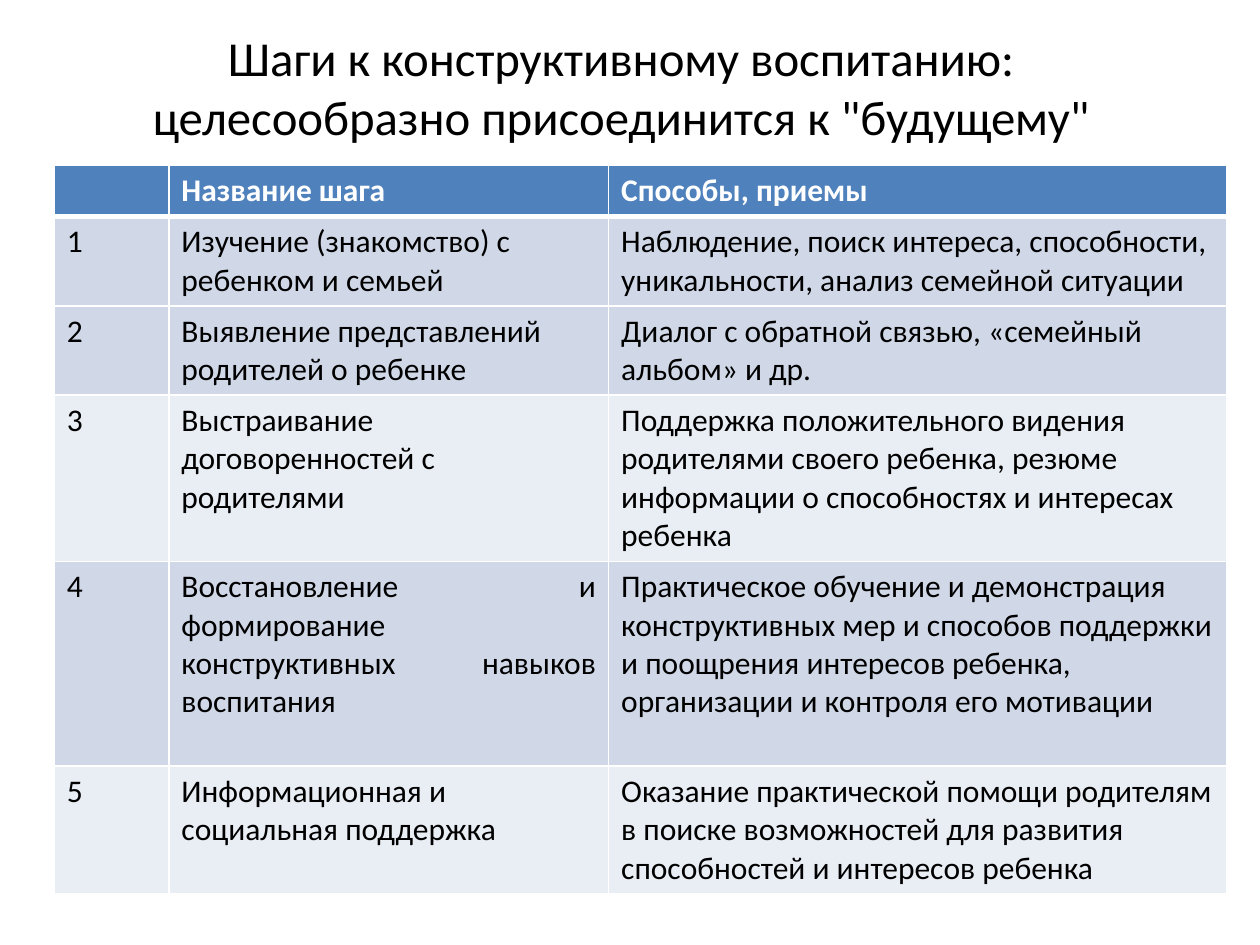
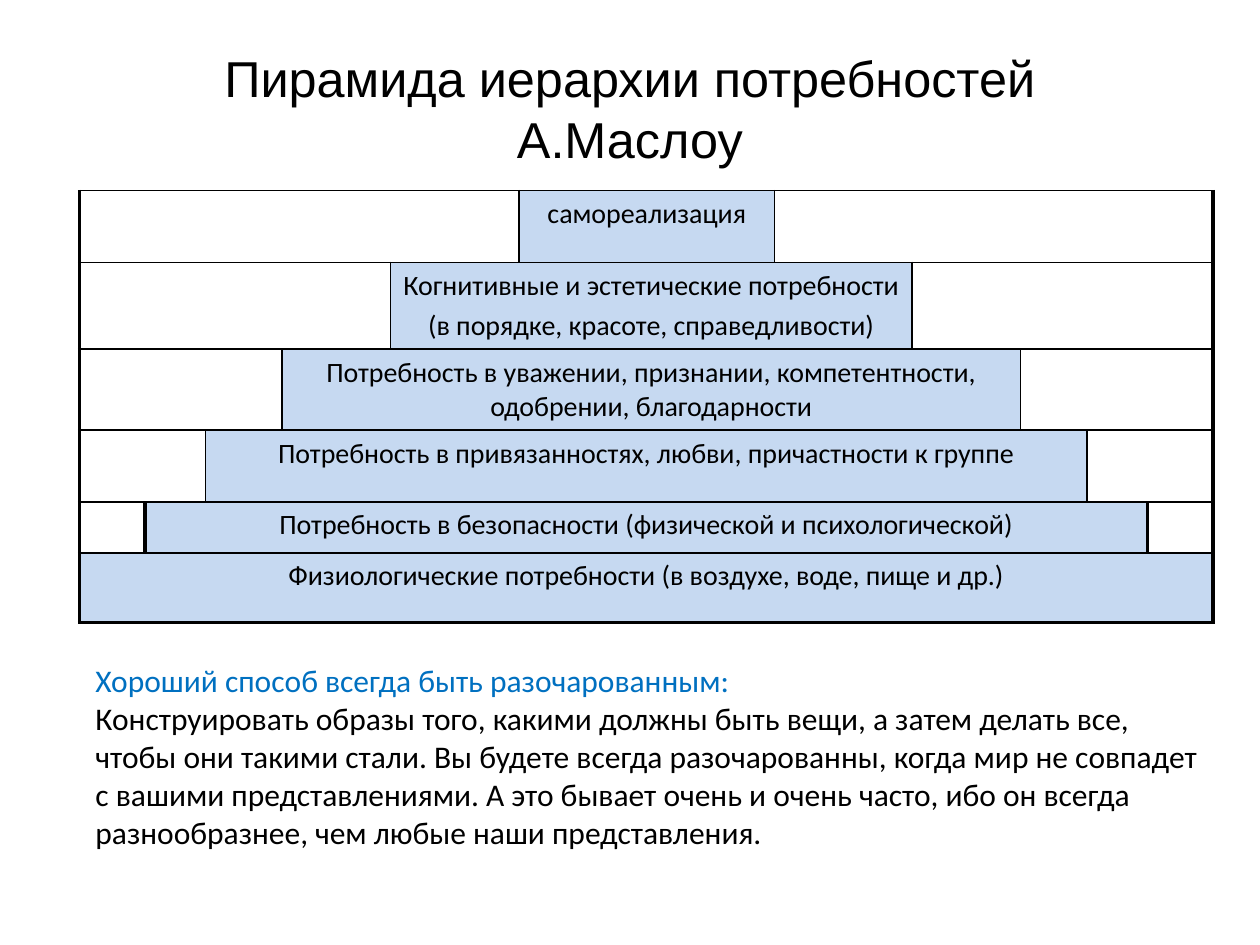
from lxml import etree
from pptx import Presentation
from pptx.dml.color import RGBColor
from pptx.enum.text import MSO_ANCHOR, PP_ALIGN
from pptx.oxml.ns import qn
from pptx.util import Pt

LEFT, CENTER, JUSTIFY = PP_ALIGN.LEFT, PP_ALIGN.CENTER, PP_ALIGN.JUSTIFY
MIDDLE = MSO_ANCHOR.MIDDLE
BLANK_LAYOUT = 6

BLACK, WHITE = "000000", "FFFFFF"
HEADER_BLUE, BAND_DARK, BAND_LIGHT = "4F81BD", "D0D8E8", "E9EDF4"
LEVEL_BLUE, ACCENT_BLUE = "C6D9F1", "0070C0"
THIN, THICK, HEADER_RULE = 1, 2.25, 3

STEP_COLUMNS = [65.5, 251.3, 353.5]
STEP_ROWS = [29.5, 51, 51, 95, 117, 73]
STEP_FILLS = [HEADER_BLUE, BAND_DARK, BAND_DARK, BAND_LIGHT, BAND_DARK, BAND_LIGHT]
JUSTIFIED_CELL = (4, 1)
STEPS = [
    ("Название шага", "Способы, приемы"),
    ("Изучение (знакомство) с ребенком и семьей",
     "Наблюдение, поиск интереса, способности, уникальности, анализ семейной ситуации"),
    ("Выявление представлений родителей о ребенке",
     "Диалог с обратной связью, «семейный альбом» и др."),
    ("Выстраивание договоренностей с родителями",
     "Поддержка положительного видения родителями своего ребенка, резюме "
     "информации о способностях и интересах ребенка"),
    ("Восстановление и формирование конструктивных навыков воспитания",
     "Практическое обучение и демонстрация конструктивных мер и способов поддержки "
     "и поощрения интересов ребенка, организации и контроля его мотивации"),
    ("Информационная и социальная поддержка",
     "Оказание практической помощи родителям в поиске возможностей для развития "
     "способностей и интересов ребенка"),
]

LEVEL_COLUMNS = [37.4, 34.6, 43.9, 61.9, 73.4, 146.2, 78.5, 61.9, 38.2, 34.6, 37.4]
LEVEL_ROWS = [41, 49.5, 46.3, 41, 29.2, 39.6]
LEVELS = [
    "самореализация",
    "Когнитивные и эстетические потребности\n(в порядке, красоте, справедливости)",
    "Потребность в уважении, признании, компетентности, одобрении, благодарности",
    "Потребность в привязанностях, любви, причастности к группе",
    "Потребность в безопасности (физической и психологической)",
    "Физиологические потребности (в воздухе, воде, пище и др.)",
]

ADVICE = (
    "Хороший способ всегда быть разочарованным:\n"
    "Конструировать образы того, какими должны быть вещи, а затем делать все, чтобы "
    "они такими стали. Вы будете всегда разочарованны, когда мир не совпадет с вашими "
    "представлениями. А это бывает очень и очень часто, ибо он всегда разнообразнее, "
    "чем любые наши представления."
)


def color(value):
    return RGBColor.from_string(value)


class Deck:
    """Holds the presentation, its text style and the current page."""

    def __init__(self):
        self.deck = Presentation()
        self.deck.slide_width, self.deck.slide_height = Pt(720), Pt(540)
        self.page = None

    def add_page(self):
        self.page = self.deck.slides.add_slide(self.deck.slide_layouts[BLANK_LAYOUT])

    def fill_text(self, frame, text, size, colors=(BLACK,), font="Calibri",
                  align=LEFT, bold=False, gap=0):
        """Fill a frame; the last colour serves all remaining paragraphs."""
        frame.text = text
        for index, para in enumerate(frame.paragraphs):
            para.alignment = align
            if index:
                para.space_before = Pt(gap)
            for span in para.runs:
                span.font.name, span.font.size, span.font.bold = font, Pt(size), bold
                span.font.color.rgb = color(colors[min(index, len(colors) - 1)])

    def add_text(self, left, top, width, height, text, size, **style):
        box = self.page.shapes.add_textbox(Pt(left), Pt(top), Pt(width), Pt(height))
        box.text_frame.word_wrap = True
        self.fill_text(box.text_frame, text, size, **style)
        return box

    def add_title(self, left, top, text, size, font):
        box = self.add_text(left, top, 648, 79, text, size, font=font, align=CENTER)
        box.text_frame.vertical_anchor = MIDDLE

    def add_table(self, left, top, columns, rows):
        table = self.page.shapes.add_table(
            len(rows), len(columns), Pt(left), Pt(top),
            Pt(sum(columns)), Pt(sum(rows))).table
        table.first_row = table.horz_banding = False
        for column, width in zip(table.columns, columns):
            column.width = Pt(width)
        for row, height in zip(table.rows, rows):
            row.height = Pt(height)
        return table

    def paint_cell(self, cell, fill, line, widths):
        """Set fill and border widths, given as left, right, top, bottom."""
        properties = cell._tc.get_or_add_tcPr()
        for side, width in zip("LRTB", widths):
            border = etree.SubElement(properties, qn(f"a:ln{side}"), w=str(Pt(width)))
            solid = etree.SubElement(border, qn("a:solidFill"))
            etree.SubElement(solid, qn("a:srgbClr"), val=line)
        if fill:
            cell.fill.solid()
            cell.fill.fore_color.rgb = color(fill)
        else:
            cell.fill.background()

    def merge_cells(self, table, row, first, last, fill, line, widths):
        for column in range(first, last + 1):
            self.paint_cell(table.cell(row, column), fill, line, widths)
        if last > first:
            table.cell(row, first).merge(table.cell(row, last))
        return table.cell(row, first)


def build_steps(deck):
    deck.add_page()
    deck.add_title(31, 10, "Шаги к конструктивному воспитанию:\v"
                   "целесообразно присоединится к \"будущему\"", 27.9, "Calibri")
    table = deck.add_table(31, 94.3, STEP_COLUMNS, STEP_ROWS)
    for row, (step, fill) in enumerate(zip(STEPS, STEP_FILLS)):
        header = row == 0
        widths = (THIN, THIN, HEADER_RULE if row == 1 else THIN,
                  HEADER_RULE if header else THIN)
        for column, text in enumerate(("" if header else str(row), *step)):
            cell = table.cell(row, column)
            deck.paint_cell(cell, fill, WHITE, widths)
            deck.fill_text(cell.text_frame, text, 18, bold=header,
                           colors=(WHITE if header else BLACK,),
                           align=JUSTIFY if (row, column) == JUSTIFIED_CELL else LEFT)


def build_pyramid(deck):
    deck.add_page()
    deck.add_title(36, 22, "Пирамида иерархии потребностей\vА.Маслоу", 28.8, "Arial")
    table = deck.add_table(45.4, 109, LEVEL_COLUMNS, LEVEL_ROWS)
    last_column = len(LEVEL_COLUMNS) - 1
    middle = last_column // 2
    for row, text in enumerate(LEVELS):
        first, last = middle - row, middle + row
        side = THICK if row >= 4 else THIN
        bottom = THICK if row == len(LEVELS) - 1 else THIN
        level = deck.merge_cells(table, row, first, last, LEVEL_BLUE, BLACK,
                                 (side, side, THIN, bottom))
        deck.fill_text(level.text_frame, text, 16, align=CENTER, gap=3.2)
        if first > 0:
            deck.merge_cells(table, row, 0, first - 1, None, BLACK,
                             (THICK, side, THIN, THIN))
            deck.merge_cells(table, row, last + 1, last_column, None, BLACK,
                             (side, THICK, THIN, THIN))
    deck.add_text(47.5, 374.4, 648, 138, ADVICE, 18, colors=(ACCENT_BLUE, BLACK))


def main():
    deck = Deck()
    build_steps(deck)
    build_pyramid(deck)
    deck.deck.save("out.pptx")


if __name__ == "__main__":
    main()
